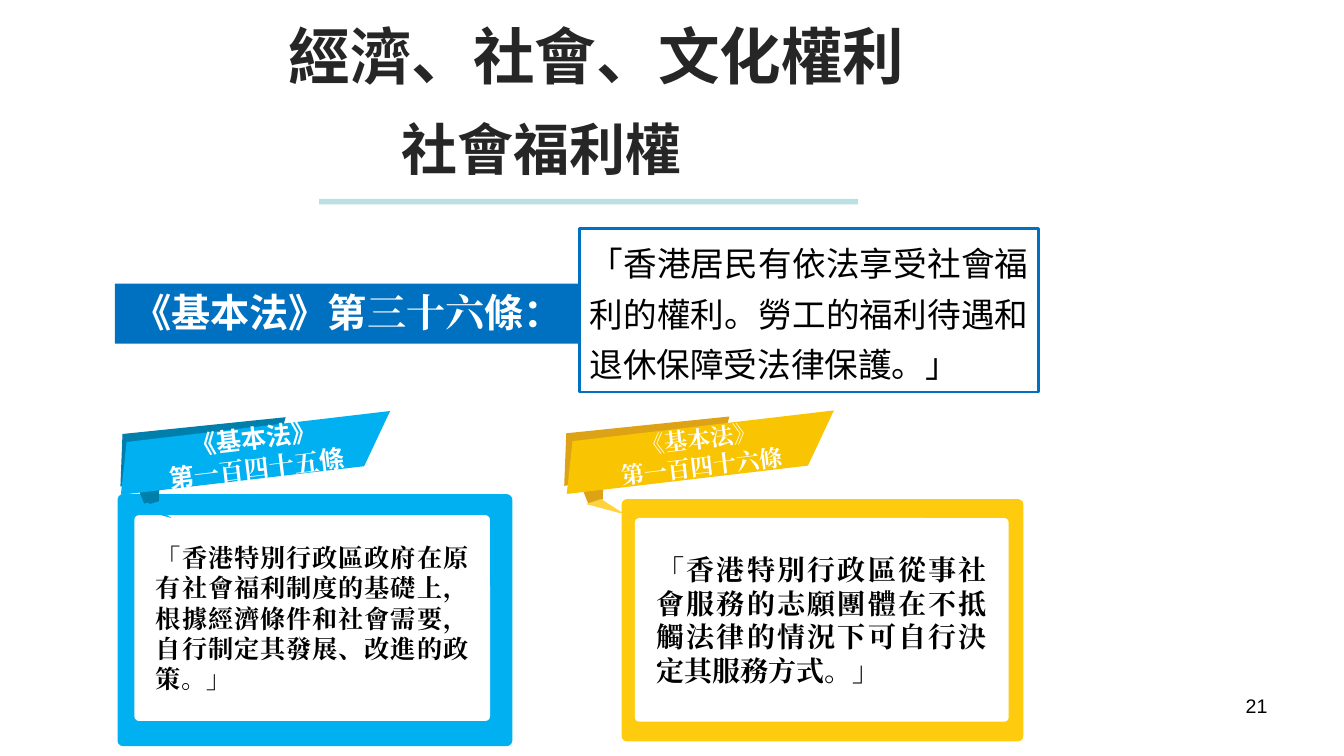
from dataclasses import dataclass
from typing import NamedTuple, Optional

from lxml.etree import SubElement
from pptx import Presentation
from pptx.dml.color import RGBColor
from pptx.enum.shapes import MSO_SHAPE as Shape
from pptx.enum.text import MSO_ANCHOR as Anchor, PP_ALIGN as Align
from pptx.oxml.ns import qn
from pptx.util import Pt


@dataclass(frozen=True)
class Theme:
    ink: str = "262626"
    black: str = "000000"
    white: str = "FFFFFF"
    rule: str = "BBE0E3"
    law: str = "0070C0"
    sans: str = "Roboto"
    serif: str = "Times New Roman"
    number_font: str = "Arial"
    title: float = 44
    subtitle: float = 40
    heading: float = 28
    quote: float = 24
    number: float = 14


class Box(NamedTuple):
    x: float
    y: float
    w: float
    h: float


class Run(NamedTuple):
    text: str
    font: str
    size: float
    color: str
    bold: bool = True


@dataclass(frozen=True)
class Card:
    frame: Box
    panel: Box
    ribbon: Box
    fold: tuple[float, float]
    tail: tuple[float, float]
    frame_color: str
    ribbon_color: str
    fold_color: str
    tail_color: str
    label: list[list[Run]]
    body: Run


T = Theme()
ROUNDING = 0.022
RIBBON_TURN = 353.3
FOLD = [(118, 0), (108, 37), (28, 46), (27.5, 60), (17.5, 63), (11.5, 48), (0, 49.5), (1.5, 12)]
TAIL = [(11, 0), (28, 11), (0, 3.5)]


def article(text: str, font: str, size: float = 18) -> Run:
    return Run(text, font, size, T.white)


CARDS = [
    Card(Box(84, 353, 282, 180), Box(96, 368, 254, 147), Box(83.5, 305, 198, 37),
         (86, 298), (94.5, 359), "00B0F0", "00B0F0", "007FAC", "00B0F0",
         [[article("《基本法》", T.sans)],
          [article("第", T.sans), article("一百四十五", T.serif), article("條", T.sans)]],
         Run("「香港特別行政區政府在原有社會福利制度的基礎上，根據經濟條件和社會需要，"
             "自行制定其發展、改進的政策。」", T.serif, 18, T.black)),
    Card(Box(444, 356.5, 287, 173), Box(453.5, 370, 267, 145.5), Box(402, 304.5, 196.5, 37),
         (403, 297.5), (418.5, 356.5), "FECB0E", "F9C401", "DDA216", "FED33B",
         [[article("《基本法》", T.serif, 16.6)], [article("第一百四十六條", T.serif, 16.6)]],
         Run("「香港特別行政區從事社會服務的志願團體在不抵觸法律的情況下"
             "可自行決定其服務方式。」", T.serif, 20, T.black)),
]


def paint(sp, fill: Optional[str], line: Optional[str] = None) -> None:
    sp.shadow.inherit = False
    if fill:
        sp.fill.solid()
        sp.fill.fore_color.rgb = RGBColor.from_string(fill)
    else:
        sp.fill.background()
    if line:
        sp.line.color.rgb = RGBColor.from_string(line)
        sp.line.width = Pt(2)
    else:
        sp.line.fill.background()


def add_block(s, box: Box, fill: Optional[str], line: Optional[str] = None, rounded: bool = False):
    kind = Shape.ROUNDED_RECTANGLE if rounded else Shape.RECTANGLE
    sp = s.shapes.add_shape(kind, *map(Pt, box))
    if rounded:
        sp.adjustments[0] = ROUNDING
    paint(sp, fill, line)
    return sp


def add_outline(s, origin: tuple[float, float], points: list[tuple[float, float]], fill: str):
    corners = [(Pt(origin[0] + x), Pt(origin[1] + y)) for x, y in points]
    builder = s.shapes.build_freeform(*corners[0])
    builder.add_line_segments(corners[1:], close=True)
    sp = builder.convert_to_shape()
    paint(sp, fill)
    return sp


def write(sp, lines: list[list[Run]], align: Align, anchor: Anchor = Anchor.TOP,
          insets: tuple[float, float, float, float] = (7.2, 3.6, 7.2, 3.6),
          spacing: Optional[float] = None, after: float = 0) -> None:
    tf = sp.text_frame
    tf.word_wrap = True
    tf.vertical_anchor = anchor
    tf.margin_left, tf.margin_top, tf.margin_right, tf.margin_bottom = map(Pt, insets)
    for i, runs in enumerate(lines):
        p = tf.add_paragraph() if i else tf.paragraphs[0]
        p.alignment = align
        p.space_after = Pt(after)
        if spacing:
            p.line_spacing = spacing
        for run in runs:
            r = p.add_run()
            r.text = run.text
            r.font.name = run.font
            r.font.size = Pt(run.size)
            r.font.bold = run.bold
            r.font.color.rgb = RGBColor.from_string(run.color)
            # East Asian glyphs follow the same typeface
            SubElement(r.font._element, qn("a:ea"), typeface=run.font)


def add_label(s, box: Box, run: Run, align: Align, anchor: Anchor = Anchor.TOP,
              insets: tuple[float, float, float, float] = (7.2, 3.6, 7.2, 3.6)) -> None:
    write(s.shapes.add_textbox(*map(Pt, box)), [[run]], align, anchor, insets)


def add_card(s, card: Card) -> None:
    # Framed panel
    add_block(s, card.frame, card.frame_color, rounded=True)
    panel = add_block(s, card.panel, T.white, rounded=True)
    write(panel, [[card.body]], Align.JUSTIFY, Anchor.MIDDLE, (14.4, 7.2, 14.4, 7.2), after=6)
    # Folded ribbon with its label
    add_outline(s, card.fold, FOLD, card.fold_color)
    x, y, w, h = card.ribbon
    ribbon = add_outline(s, (x, y), [(w, 0), (w - 23, h), (0, h), (8.5, 0)], card.ribbon_color)
    ribbon.rotation = RIBBON_TURN
    write(ribbon, card.label, Align.CENTER, Anchor.MIDDLE, (0, 0, 0, 0))
    add_outline(s, card.tail, TAIL, card.tail_color)


def main() -> None:
    prs = Presentation()
    prs.slide_width, prs.slide_height = Pt(960), Pt(540)
    s = prs.slides.add_slide(prs.slide_layouts[6])

    # Titles and rule
    add_label(s, Box(202.5, 10, 463, 57), Run("經濟、社會、文化權利", T.sans, T.title, T.ink),
              Align.LEFT, Anchor.BOTTOM, (3.6, 1.5, 3.6, 1.5))
    add_label(s, Box(220, 80, 397, 45), Run("社會福利權", T.sans, T.subtitle, T.ink),
              Align.LEFT, insets=(67, 1.5, 3.6, 1.5))
    add_block(s, Box(228, 142, 385, 4), T.rule)

    # Article 36 and its wording
    quote = add_block(s, Box(414, 163, 328, 117), None, T.law)
    write(quote, [[Run("「香港居民有依法享受社會福利的權利。勞工的福利待遇和退休保障受法律保護。」",
                       T.sans, T.quote, T.black, False)]], Align.JUSTIFY, spacing=1.25)
    law = add_block(s, Box(82, 202.5, 332.5, 43), T.law)
    write(law, [[article("《基本法》第", T.sans, T.heading), article("三十六", T.serif, T.heading),
                 article("條：", T.sans, T.heading)]], Align.CENTER)

    # Article cards
    for card in CARDS:
        add_card(s, card)

    # Slide number
    add_label(s, Box(688.5, 492, 224, 37), Run("21", T.number_font, T.number, T.black, False), Align.RIGHT)

    prs.save("out.pptx")


if __name__ == "__main__":
    main()
